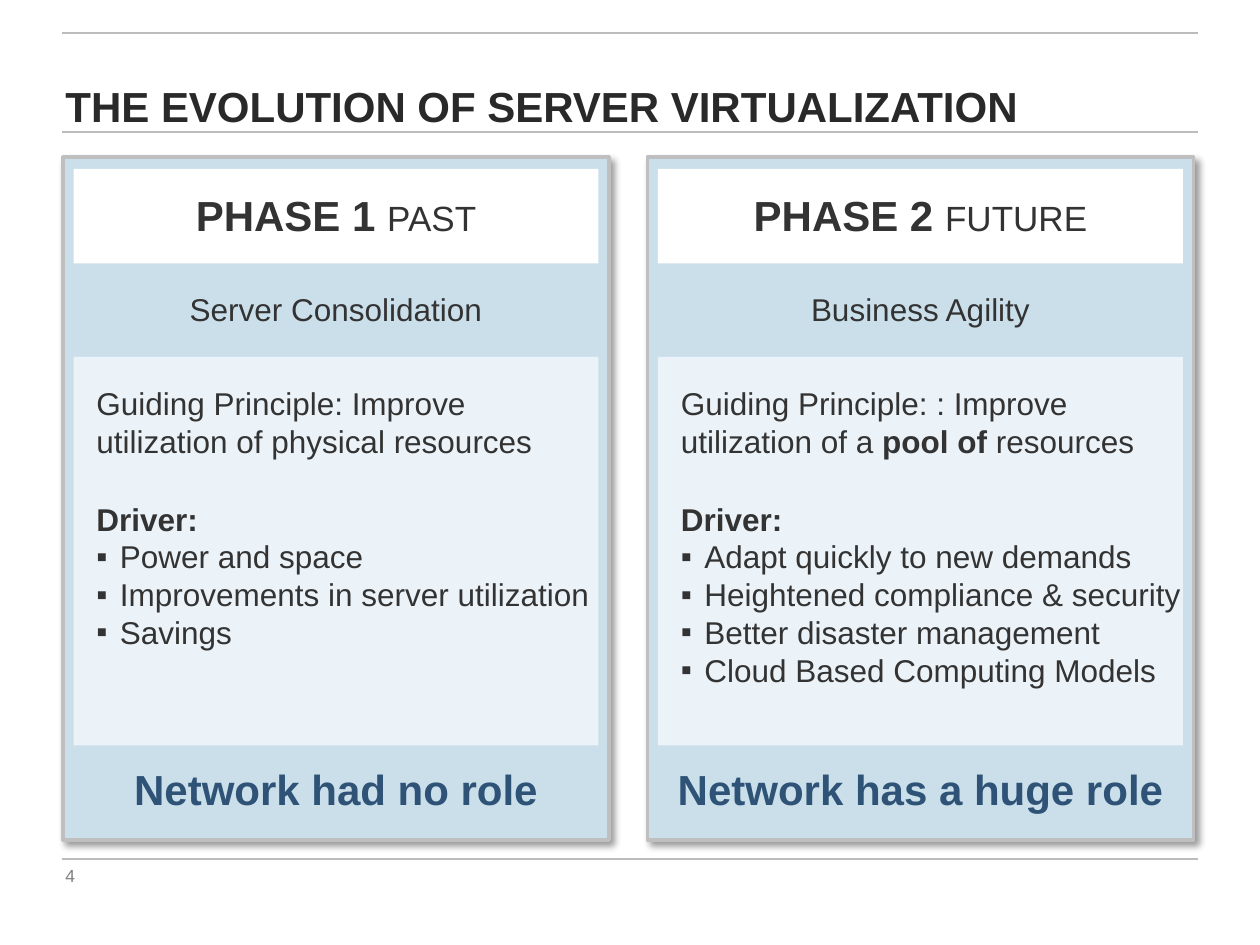
"""Build a slide comparing two phases of server virtualization."""
from dataclasses import dataclass

from lxml.etree import SubElement
from pptx import Presentation
from pptx.dml.color import RGBColor
from pptx.enum.shapes import MSO_CONNECTOR as Connector, MSO_SHAPE as Shape
from pptx.enum.text import MSO_ANCHOR as Anchor, MSO_AUTO_SIZE as AutoSize, PP_ALIGN as Align
from pptx.oxml.ns import qn
from pptx.util import Pt

FONT = "Arial"
WHITE = RGBColor(0xFF, 0xFF, 0xFF)
TITLE_INK = RGBColor(0x29, 0x29, 0x29)
INK = RGBColor(0x33, 0x33, 0x33)
NAVY = RGBColor(0x2F, 0x53, 0x76)
GRAY = RGBColor(0x80, 0x7F, 0x83)
RULE = RGBColor(0xBA, 0xBC, 0xBE)
BORDER = RGBColor(0xBF, 0xBF, 0xBF)
PANEL_BLUE = RGBColor(0xCB, 0xDF, 0xEB)

PANEL_TOP, PANEL_WIDTH, PANEL_HEIGHT = 90, 312, 390
PANEL_LEFTS = (36, 370)
RULE_TOPS = (18.7, 75.6, 491)
BULLET_INDENT = 13.5


@dataclass(frozen=True)
class Phase:
    name: str
    period: str
    goal: str
    principle: tuple[tuple[str, bool], ...]
    drivers: tuple[str, ...]
    network_role: str


PHASES = (
    Phase(
        "PHASE 1 ", "PAST", "Server Consolidation",
        (("Guiding Principle: Improve utilization of physical resources", False),),
        ("Power and space", "Improvements in server utilization", "Savings"),
        "Network had no role",
    ),
    Phase(
        "PHASE 2 ", "FUTURE", "Business Agility",
        (("Guiding Principle: : Improve utilization of a ", False),
         ("pool of ", True), ("resources", False)),
        ("Adapt quickly to new demands", "Heightened compliance & security",
         "Better disaster management", "Cloud Based Computing Models"),
        "Network has a huge role",
    ),
)


def add_run(paragraph, text: str, *, size: float = 18, color: RGBColor = INK,
            bold: bool = False) -> None:
    run = paragraph.add_run()
    run.text = text
    run.font.name = FONT
    run.font.size = Pt(size)
    run.font.bold = bold
    run.font.color.rgb = color


def add_box(slide, left: float, top: float, width: float, height: float,
            align: Align = Align.LEFT):
    frame = slide.shapes.add_textbox(Pt(left), Pt(top), Pt(width), Pt(height)).text_frame
    frame.word_wrap = True
    frame.paragraphs[0].alignment = align
    return frame


def add_rectangle(slide, left: float, top: float, width: float, height: float,
                  color: RGBColor):
    shape = slide.shapes.add_shape(
        Shape.RECTANGLE, Pt(left), Pt(top), Pt(width), Pt(height))
    shape.shadow.inherit = False
    shape.fill.solid()
    shape.fill.fore_color.rgb = color
    shape.line.fill.background()
    return shape


def set_alpha(color_parent, percent: int) -> None:
    color = color_parent.find(qn("a:srgbClr"))
    SubElement(color, qn("a:alpha"), val=str(percent * 1000))


def add_shadow(shape) -> None:
    effects = shape._element.spPr.find(qn("a:effectLst"))
    shadow = SubElement(
        effects, qn("a:outerShdw"), blurRad=str(Pt(4)), dist=str(Pt(3)),
        dir=str(45 * 60000), algn="tl", rotWithShape="0")
    SubElement(shadow, qn("a:srgbClr"), val="000000")
    set_alpha(shadow, 40)


def add_rule(slide, top: float) -> None:
    rule = slide.shapes.add_connector(
        Connector.STRAIGHT, Pt(35.5), Pt(top), Pt(684.5), Pt(top))
    rule.line.color.rgb = RULE
    rule.line.width = Pt(1)
    SubElement(rule._element.spPr, qn("a:effectLst"))


def add_bullet(frame, text: str) -> None:
    paragraph = frame.add_paragraph()
    properties = paragraph._p.get_or_add_pPr()
    properties.set("marL", str(Pt(BULLET_INDENT)))
    properties.set("indent", str(-Pt(BULLET_INDENT)))
    SubElement(properties, qn("a:buFont"), typeface=FONT)
    SubElement(properties, qn("a:buChar"), char="▪")
    add_run(paragraph, text)


def add_phase(slide, left: float, phase: Phase) -> None:
    panel = add_rectangle(slide, left, PANEL_TOP, PANEL_WIDTH, PANEL_HEIGHT, PANEL_BLUE)
    panel.line.color.rgb = BORDER
    panel.line.width = Pt(2.25)
    add_shadow(panel)
    body = add_rectangle(slide, left + 6, 204, 300, 222, WHITE)
    set_alpha(body._element.spPr.find(qn("a:solidFill")), 65)
    add_rectangle(slide, left + 6, 96.5, 300, 54, WHITE)

    heading = add_box(slide, left + 10, 105, 292, 36, Align.CENTER).paragraphs[0]
    add_run(heading, phase.name, size=24, bold=True)
    add_run(heading, phase.period, size=20)
    goal = add_box(slide, left + 33, 162, 246, 29, Align.CENTER)
    add_run(goal.paragraphs[0], phase.goal)
    principle = add_box(slide, left + 12, 216, 288, 51)
    for text, bold in phase.principle:
        add_run(principle.paragraphs[0], text, bold=bold)
    drivers = add_box(slide, left + 12, 282, 302, 29 + 21.6 * len(phase.drivers))
    add_run(drivers.paragraphs[0], "Driver:", bold=True)
    for driver in phase.drivers:
        add_bullet(drivers, driver)
    role = add_box(slide, left + 4, 433, 304, 36, Align.CENTER)
    add_run(role.paragraphs[0], phase.network_role, size=24, color=NAVY, bold=True)


def add_title(slide, text: str) -> None:
    title = slide.shapes.title
    title.left, title.top, title.width, title.height = Pt(37.4), Pt(20.2), Pt(647.3), Pt(58.3)
    frame = title.text_frame
    frame.auto_size = AutoSize.NONE
    frame.vertical_anchor = Anchor.BOTTOM
    frame.margin_left = 0
    paragraph = frame.paragraphs[0]
    paragraph.alignment = Align.LEFT
    paragraph.line_spacing = 0.9
    add_run(paragraph, text, size=24, color=TITLE_INK, bold=True)


def add_slide_number(slide, number: str) -> None:
    frame = add_box(slide, 37.4, 490.3, 41.8, 15.8)
    frame.margin_left = frame.margin_top = frame.margin_right = frame.margin_bottom = 0
    frame.vertical_anchor = Anchor.BOTTOM
    add_run(frame.paragraphs[0], number, size=10, color=GRAY)


def main() -> None:
    presentation = Presentation()
    presentation.slide_width, presentation.slide_height = Pt(720), Pt(540)
    slide = presentation.slides.add_slide(presentation.slide_layouts[5])
    add_slide_number(slide, "4")
    for top in RULE_TOPS:
        add_rule(slide, top)
    add_title(slide, "THE EVOLUTION OF SERVER VIRTUALIZATION")
    for left, phase in zip(PANEL_LEFTS, PHASES):
        add_phase(slide, left, phase)
    presentation.save("out.pptx")


if __name__ == "__main__":
    main()
